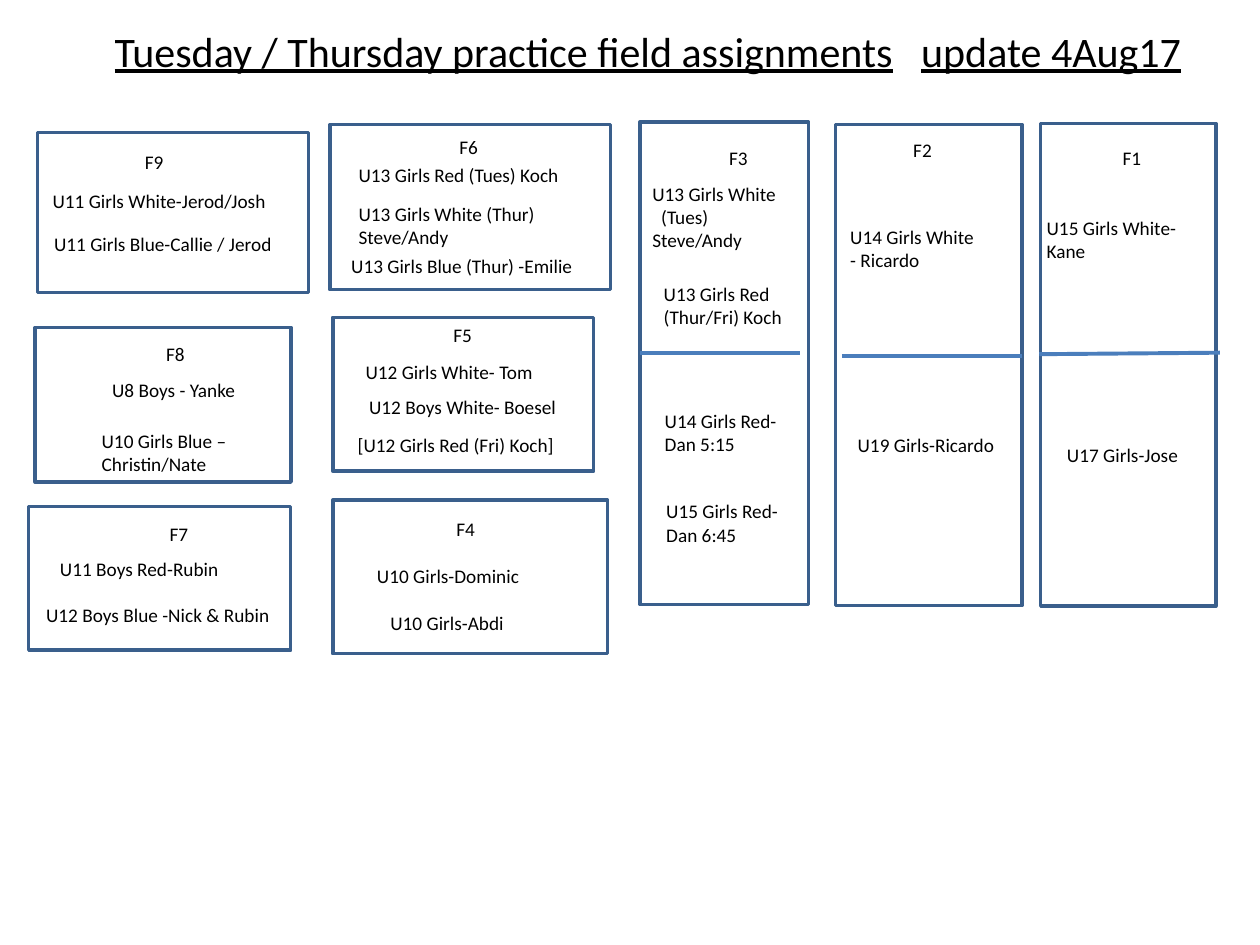
from lxml.etree import SubElement as Sub
from pptx import Presentation
from pptx.dml.color import RGBColor
from pptx.enum.shapes import MSO_CONNECTOR as Con, MSO_SHAPE as Geo
from pptx.enum.text import MSO_AUTO_SIZE as Fit
from pptx.oxml.ns import qn
from pptx.util import Cm, Pt

EDGE, RULE, INK = "3A5F8C", "4B7EBC", "000000"
BODY = {"name": "Calibri", "size": Pt(11)}
HEAD = {"name": "Calibri", "size": Pt(24), "underline": True}
ROW, STEP = 0.73, 0.47  # height of one text row, and of each further row

# name, box, label offset, notes (left, top, width, rows, text), divider
FIELDS = [
    ("F9", (0.76, 2.67, 5.46, 3.23), (1.91, 0.23), [
        (0.05, 1.02, 4.85, 1, "U11 Girls White-Jerod/Josh"),
        (0.08, 1.88, 4.93, 1, "U11 Girls Blue-Callie / Jerod")], None),
    ("F8", (0.71, 6.6, 5.16, 3.12), (2.39, 0.18), [
        (1.3, 0.91, 3.51, 1, "U8 Boys - Yanke"),
        (1.09, 1.93, 3.48, 2, "U10 Girls Blue –Christin/Nate")], None),
    ("F7", (0.58, 10.21, 5.28, 2.9), (2.59, 0.2), [
        (0.38, 0.89, 5.92, 1, "U11 Boys Red-Rubin"),
        (0.1, 1.83, 5.23, 1, "U12 Boys Blue -Nick & Rubin")], None),
    ("F6", (6.65, 2.51, 5.66, 3.33), (2.36, 0.1), [
        (0.33, 0.66, 4.98, 1, "U13 Girls Red (Tues) Koch"),
        (0.33, 1.45, 4.34, 2, "U13 Girls White (Thur)\nSteve/Andy"),
        (0.18, 2.49, 5.31, 1, "U13 Girls Blue (Thur) -Emilie")], None),
    ("F5", (6.71, 6.4, 5.26, 3.1), (2.18, 0), [
        (0.41, 0.74, 4.52, 1, "U12 Girls White- Tom"),
        (0.48, 1.45, 4.32, 1, "U12 Boys White- Boesel"),
        (0.25, 2.21, 4.52, 1, "[U12 Girls Red (Fri) Koch]")], None),
    ("F4", (6.71, 10.08, 5.54, 3.1), (2.24, 0.23), [
        (0.64, 1.17, 4.01, 1, "U10 Girls-Dominic"),
        (0.91, 2.11, 4.01, 1, "U10 Girls-Abdi")], None),
    ("F3", (12.9, 2.46, 3.4, 9.73), (1.55, 0.36), [
        (0, 1.09, 3.4, 3, "U13 Girls White\n(Tues)\nSteve/Andy"),
        (0.23, 3.1, 2.92, 2, "U13 Girls Red (Thur/Fri) Koch"),
        (0.25, 5.66, 3.02, 2, "U14 Girls Red-Dan 5:15"),
        (0.28, 7.49, 2.87, 2, "U15 Girls Red-\nDan 6:45")],
     (0, 4.65, 3.23, 4.65)),
    ("F2", (16.84, 2.51, 3.76, 9.7), (1.32, 0.15), [
        (0.05, 1.91, 3.53, 2, "U14 Girls White\n- Ricardo"),
        (0.2, 6.1, 3.35, 1, "U19 Girls-Ricardo")],
     (0.13, 4.67, 3.76, 4.67)),
    ("F1", (20.98, 2.49, 3.53, 9.73), (1.4, 0.33), [
        (-0.13, 1.75, 3.63, 2, "U15 Girls White-Kane"),
        (0.28, 6.32, 3, 1, "U17 Girls-Jose")],
     (-0.03, 4.65, 3.61, 4.62)),
]


def tint(hue):
    return RGBColor.from_string(hue)


def write(slide, box, text, form=BODY, wrap=True, tab=None):
    """Add a text box; a line that opens with a bracket is indented."""
    frame = slide.shapes.add_textbox(*map(Cm, box)).text_frame
    frame.word_wrap = wrap
    frame.auto_size = Fit.SHAPE_TO_FIT_TEXT
    frame.text = text
    for para in frame.paragraphs:
        props = para._p.get_or_add_pPr()
        if para.text.startswith("("):
            props.set("marL", str(Cm(0.18)))
        if tab:
            stops = Sub(props, qn("a:tabLst"))
            Sub(stops, qn("a:tab"), pos=str(Cm(tab)), algn="l")
        for run in para.runs:
            for key, val in form.items():
                setattr(run.font, key, val)
            run.font.color.rgb = tint(INK)


def split(slide, left, top, ends):
    """Draw the line between the two halves of a field."""
    x1, y1, x2, y2 = ends
    line = slide.shapes.add_connector(
        Con.STRAIGHT, Cm(left + x1), Cm(top + y1), Cm(left + x2), Cm(top + y2))
    line.line.color.rgb = tint(RULE)
    line.line.width = Pt(2.25)
    Sub(line._element.spPr, qn("a:effectLst"))


def field(slide, name, box, label, notes, ends):
    left, top = box[:2]
    rect = slide.shapes.add_shape(Geo.RECTANGLE, *map(Cm, box))
    rect.shadow.inherit = False
    rect.fill.background()
    rect.line.color.rgb = tint(EDGE)
    rect.line.width = Pt(2)
    write(slide, (left + label[0], top + label[1], 0.89, ROW), name, wrap=False)
    for x, y, width, rows, text in notes:
        high = ROW + STEP * (rows - 1)
        write(slide, (left + x, top + y, width, high), text)
    if ends:
        split(slide, left, top, ends)


def title(slide, box):
    write(slide, box, "Tuesday / Thursday practice field assignments\tupdate 4Aug17",
          HEAD, tab=16.26)


def main():
    deck = Presentation()
    deck.slide_width, deck.slide_height = Cm(25.4), Cm(19.05)
    slide = deck.slides.add_slide(deck.slide_layouts[6])
    title(slide, (2.06, 0.38, 22.4, 1.27))
    for spec in FIELDS:
        field(slide, *spec)
    deck.save("out.pptx")


if __name__ == "__main__":
    main()
